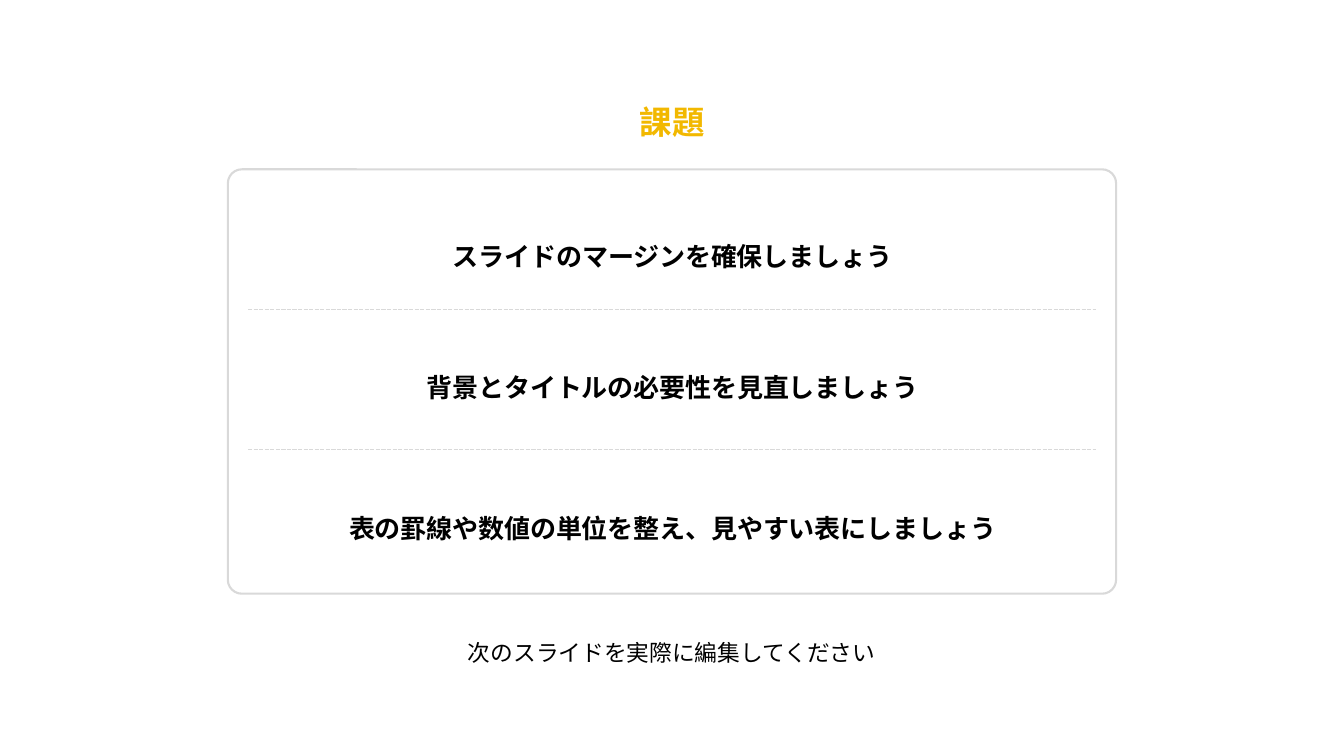
from lxml import etree
from pptx import Presentation
from pptx import util as u
from pptx.dml.color import RGBColor
from pptx.enum import dml, shapes, text
from pptx.oxml import ns


def tint(code):
    return RGBColor.from_string(code)


class Deck:
    face = "Noto Sans CJK JP"
    white, grey, gold, black = "FFFFFF", "D9D9D9", "F2B800", "000000"

    def __init__(self, wide, high):
        self.file = Presentation()
        self.file.slide_width = u.Inches(wide)
        self.file.slide_height = u.Inches(high)
        self.page = self.file.slides.add_slide(self.file.slide_layouts[6])
        fill = self.page.background.fill
        fill.solid()
        fill.fore_color.rgb = tint(self.white)

    def card(self, *box, curve):
        card = self.page.shapes.add_shape(
            shapes.MSO_SHAPE.ROUNDED_RECTANGLE, *map(u.Inches, box))
        card.adjustments[0] = curve
        card.shadow.inherit = False
        card.fill.solid()
        card.fill.fore_color.rgb = tint(self.white)
        card.line.color.rgb = tint(self.grey)
        card.line.width = u.Pt(1.5)

    def rule(self, left, right, top):
        rule = self.page.shapes.add_connector(
            shapes.MSO_CONNECTOR.STRAIGHT,
            *map(u.Inches, (left, top, right, top)))
        rule.line.color.rgb = tint(self.grey)
        rule.line.width = u.Pt(1)
        rule.line.dash_style = dml.MSO_LINE.SQUARE_DOT
        etree.SubElement(rule._element.spPr, ns.qn("a:effectLst"))

    def label(self, words, *box, size, color=black, bold=True):
        frame = self.page.shapes.add_textbox(*map(u.Inches, box)).text_frame
        form = {"word_wrap": False,
                "auto_size": text.MSO_AUTO_SIZE.SHAPE_TO_FIT_TEXT}
        for key, value in form.items():
            setattr(frame, key, value)
        para = frame.paragraphs[0]
        para.alignment = text.PP_ALIGN.CENTER
        run = para.add_run()
        run.text = words
        form = {"name": self.face, "size": u.Pt(size), "bold": bold}
        for key, value in form.items():
            setattr(run.font, key, value)
        run.font.color.rgb = tint(color)
        # Raised baseline and East Asian font
        props = run._r.get_or_add_rPr()
        props.set("baseline", "30000")
        east = etree.Element(ns.qn("a:ea"), typeface=self.face)
        props.find(ns.qn("a:latin")).addnext(east)


def main():
    deck = Deck(13.33, 7.5)

    # Card with dashed dividers
    deck.card(2.26, 1.68, 8.81, 4.21, curve=0.033)
    for top in (3.07, 4.46):
        deck.rule(2.46, 10.87, top)

    # Heading
    deck.label("課題", 6.19, 0.9, 0.95, 0.77, size=40, color=deck.gold)

    # Tasks, centred on the card
    tasks = (("スライドのマージンを確保しましょう", 2.28, 5.3, 0.46),
             ("背景とタイトルの必要性を見直しましょう", 3.58, 5.9, 0.64),
             ("表の罫線や数値の単位を整え、見やすい表にしましょう", 4.98, 7.7, 0.64))
    for words, top, wide, high in tasks:
        deck.label(words, 6.67 - wide / 2, top, wide, high, size=32)

    # Closing line
    deck.label("次のスライドを実際に編集してください", 4.21, 6.24, 4.9, 0.57,
               size=28, bold=False)

    deck.file.save("out.pptx")


if __name__ == "__main__":
    main()
